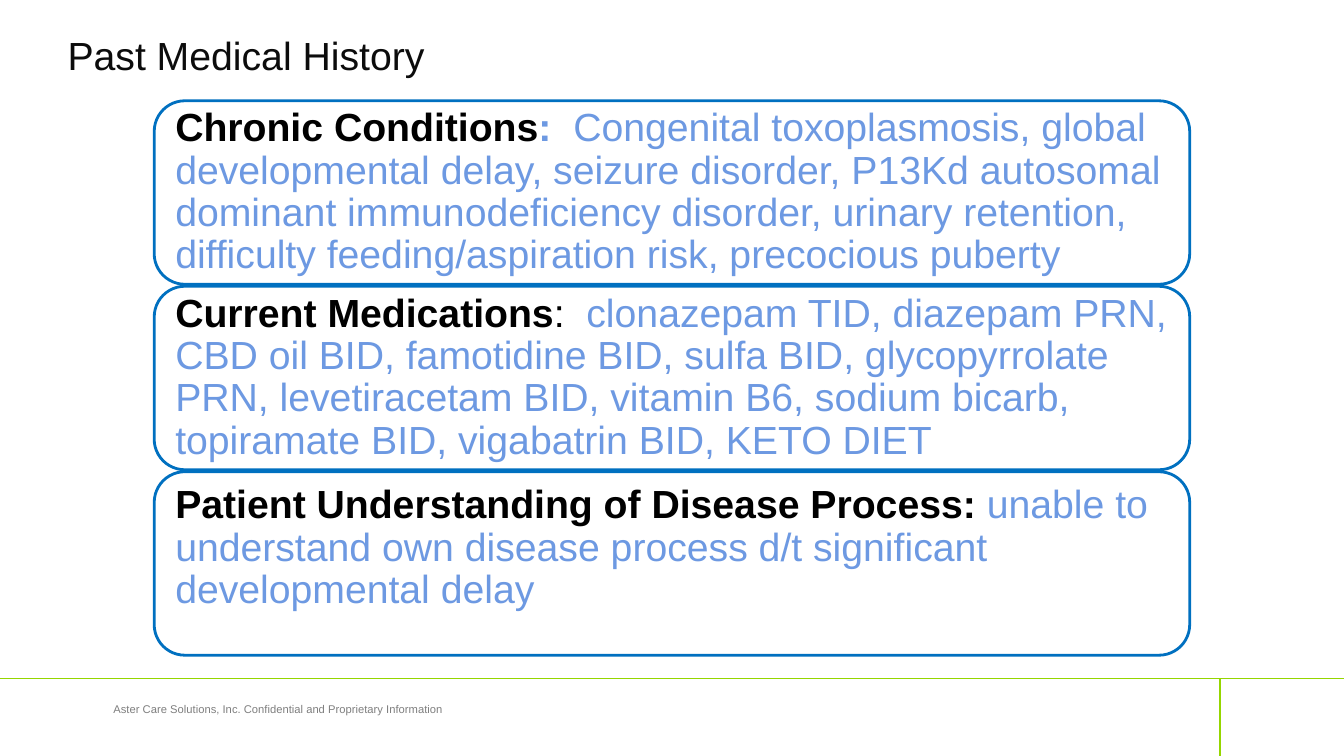
from dataclasses import dataclass

from lxml.etree import SubElement
from pptx import Presentation
from pptx.dml.color import RGBColor
from pptx.enum.shapes import MSO_CONNECTOR, MSO_SHAPE
from pptx.enum.text import MSO_ANCHOR, PP_ALIGN
from pptx.oxml.ns import qn
from pptx.slide import Slide
from pptx.util import Emu, Pt

EMU_PER_PX = 9144  # 100 px to the inch
FONT = "Arial"
WHITE = RGBColor(0xFF, 0xFF, 0xFF)
BLACK = RGBColor(0x00, 0x00, 0x00)
TITLE_INK = RGBColor(0x0C, 0x0C, 0x0C)
FOOTER_GRAY = RGBColor(0x7F, 0x7F, 0x7F)
CARD_BORDER = RGBColor(0x00, 0x70, 0xC0)
DETAIL_BLUE = RGBColor(0x6D, 0x99, 0xE2)
RULE_GREEN = RGBColor(0x95, 0xD6, 0x00)

CARD_LEFT, CARD_TOP, CARD_WIDTH, CARD_HEIGHT = 153, 100, 1027, 182
CARD_PITCH = 184
CARD_INSET = 12


@dataclass(frozen=True)
class Span:
    text: str
    color: RGBColor
    bold: bool = False


@dataclass(frozen=True)
class Card:
    spans: tuple[Span, ...]
    bottom_inset: int = CARD_INSET


@dataclass(frozen=True)
class Rule:
    x1: int
    y1: int
    x2: int
    y2: int


CARDS = (
    Card((
        Span("Chronic Conditions", BLACK, True),
        Span(":  ", DETAIL_BLUE, True),
        Span("Congenital toxoplasmosis, global developmental delay, seizure "
             "disorder, P13Kd autosomal dominant immunodeficiency disorder, "
             "urinary retention, difficulty feeding/aspiration risk, "
             "precocious puberty", DETAIL_BLUE),
    )),
    Card((
        Span("Current Medications", BLACK, True),
        Span(":  ", BLACK),
        Span("clonazepam TID, diazepam PRN, CBD oil BID, famotidine BID, "
             "sulfa BID, glycopyrrolate PRN, levetiracetam BID, vitamin B6, "
             "sodium bicarb, topiramate BID, vigabatrin BID, KETO DIET",
             DETAIL_BLUE),
    )),
    Card((
        Span("Patient Understanding of Disease Process: ", BLACK, True),
        Span("unable to understand own disease process d/t significant "
             "developmental delay", DETAIL_BLUE),
    ), bottom_inset=42),
)

FOOTER_RULES = (Rule(1210, 750, 1210, 673), Rule(0, 673, 1333, 673))


def px(length: int) -> Emu:
    return Emu(length * EMU_PER_PX)


def add_rule(slide: Slide, rule: Rule) -> None:
    line = slide.shapes.add_connector(
        MSO_CONNECTOR.STRAIGHT,
        px(rule.x1), px(rule.y1), px(rule.x2), px(rule.y2))
    line.line.color.rgb = RULE_GREEN
    line.line.width = Pt(0.75)
    SubElement(line._element.spPr, qn("a:effectLst"))


def add_title(slide: Slide, text: str) -> None:
    title = slide.shapes.title
    title.left, title.top = px(67), px(28)
    title.width, title.height = px(950), px(52)
    frame = title.text_frame
    frame.margin_left = frame.margin_right = 0
    frame.margin_top = frame.margin_bottom = 0
    frame.vertical_anchor = MSO_ANCHOR.MIDDLE
    frame.text = text
    paragraph = frame.paragraphs[0]
    paragraph.alignment = PP_ALIGN.LEFT
    paragraph.font.name = FONT
    paragraph.font.size = Pt(28)
    paragraph.font.color.rgb = TITLE_INK


def add_footer(slide: Slide, text: str) -> None:
    footer = slide.shapes.add_textbox(px(42), px(692), px(468), px(42))
    footer.text_frame.word_wrap = True
    paragraph = footer.text_frame.paragraphs[0]
    paragraph.text = text
    paragraph.alignment = PP_ALIGN.CENTER
    paragraph.font.name = FONT
    paragraph.font.size = Pt(8)
    paragraph.font.color.rgb = FOOTER_GRAY


def add_card(slide: Slide, card: Card, top: int) -> None:
    box = slide.shapes.add_shape(
        MSO_SHAPE.ROUNDED_RECTANGLE,
        px(CARD_LEFT), px(top), px(CARD_WIDTH), px(CARD_HEIGHT))
    box.shadow.inherit = False
    box.fill.solid()
    box.fill.fore_color.rgb = WHITE
    box.line.color.rgb = CARD_BORDER
    box.line.width = Pt(2)

    frame = box.text_frame
    frame.word_wrap = True
    frame.vertical_anchor = MSO_ANCHOR.MIDDLE
    frame.margin_left = frame.margin_right = frame.margin_top = px(CARD_INSET)
    frame.margin_bottom = px(card.bottom_inset)
    paragraph = frame.paragraphs[0]
    paragraph.alignment = PP_ALIGN.LEFT
    paragraph.line_spacing = 0.9
    paragraph.font.name = FONT
    paragraph.font.size = Pt(28)
    for span in card.spans:
        run = paragraph.add_run()
        run.text = span.text
        run.font.bold = span.bold
        run.font.color.rgb = span.color


def main() -> None:
    presentation = Presentation()
    presentation.slide_width, presentation.slide_height = px(1333), px(750)
    slide = presentation.slides.add_slide(presentation.slide_layouts[5])

    # Footer
    for rule in FOOTER_RULES:
        add_rule(slide, rule)
    add_footer(slide, "Aster Care Solutions, Inc. Confidential and "
                      "Proprietary Information")

    # Title and history cards
    add_title(slide, "Past Medical History")
    for index, card in enumerate(CARDS):
        add_card(slide, card, CARD_TOP + index * CARD_PITCH)

    presentation.save("out.pptx")


if __name__ == "__main__":
    main()
